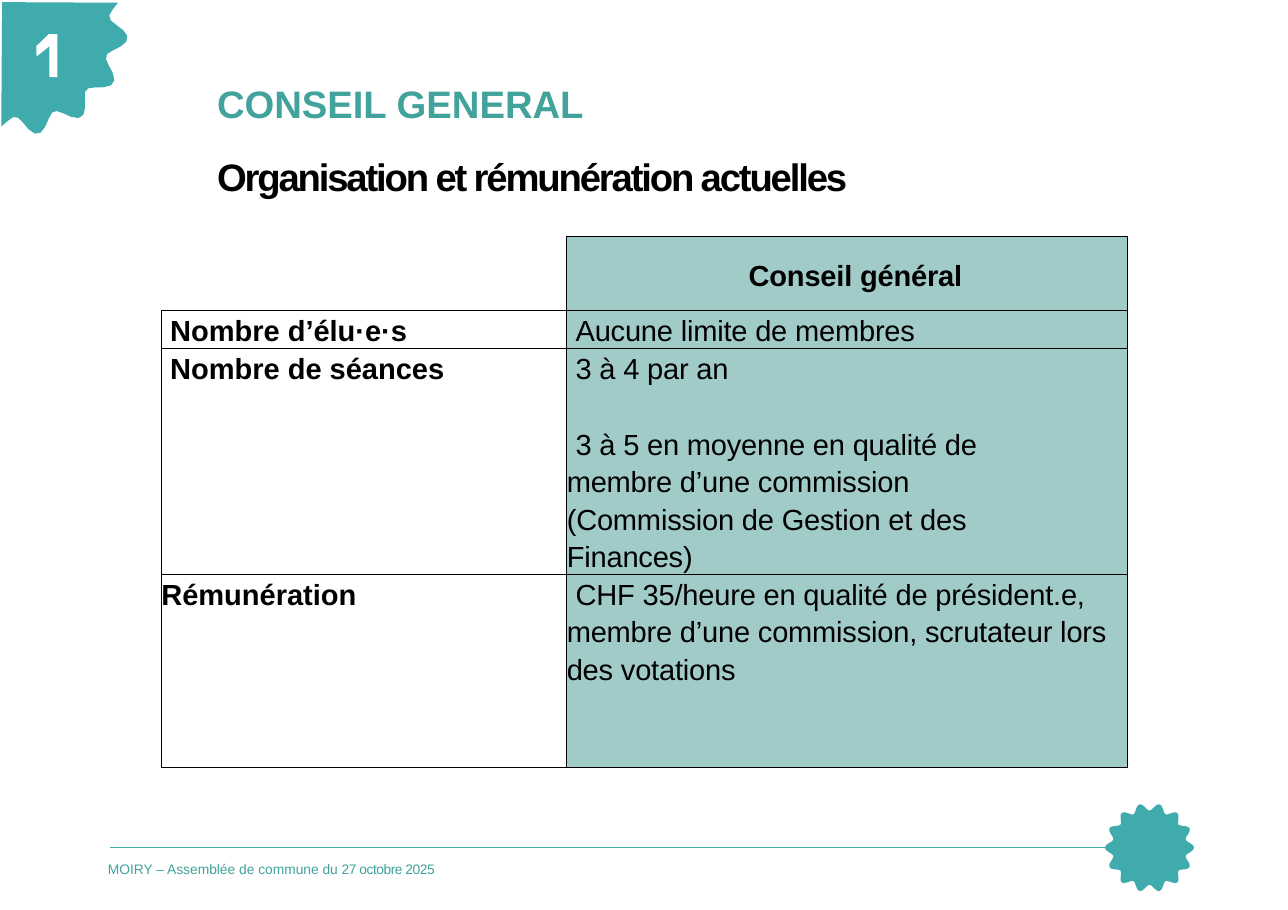
import math

import pptx
import pptx.dml.color
import pptx.enum.shapes
import pptx.enum.text
import pptx.oxml
import pptx.oxml.ns
import pptx.util

RGBColor = pptx.dml.color.RGBColor
Align = pptx.enum.text.PP_ALIGN
Anchor = pptx.enum.text.MSO_ANCHOR
Pt = pptx.util.Pt
Inches = pptx.util.Inches

TEAL = RGBColor(0x40, 0xAB, 0xAD)
TITLE_TEAL = RGBColor(0x42, 0xA2, 0x9C)
PALE_TEAL = RGBColor(0xA1, 0xCB, 0xC9)
BLACK = RGBColor(0, 0, 0)
WHITE = RGBColor(0xFF, 0xFF, 0xFF)

BADGE_WAVES = 14
STEPS_PER_WAVE = 8

ROWS = [
    ("", "Conseil général"),
    ("Nombre d’élu·e·s", "Aucune limite de membres"),
    ("Nombre de séances",
     "3 à 4 par an\n3 à 5 en moyenne en qualité de membre d’une commission "
     "(Commission de Gestion et des Finances)"),
    ("Rémunération",
     "CHF 35/heure en qualité de président.e, membre d’une commission, "
     "scrutateur lors des votations"),
]


class SlideBuilder:
    """Draws on a grid of 100 columns by 100 rows."""

    font = "Arial"

    def __init__(self, prs, layout):
        self.column = prs.slide_width / 100
        self.row = prs.slide_height / 100
        self.slide = prs.slides.add_slide(layout)
        self.shapes = self.slide.shapes

    def x(self, columns):
        return round(columns * self.column)

    def y(self, rows):
        return round(rows * self.row)

    def box(self, left, top, width, height):
        return self.x(left), self.y(top), self.x(width), self.y(height)

    def style_run(self, r, size, color, bold=False, spacing=0.0):
        r.font.name = self.font
        r.font.size = Pt(size)
        r.font.bold = bold
        r.font.color.rgb = color
        r._r.get_or_add_rPr().set("spc", str(round(spacing * 100)))

    def indent(self, p, inches):
        pPr = p._p.get_or_add_pPr()
        pPr.set("marL", "0")
        pPr.set("indent", str(Inches(inches)))

    def clear_frame(self, tf):
        tf.margin_left = tf.margin_right = tf.margin_top = tf.margin_bottom = 0
        tf.word_wrap = True
        tf.vertical_anchor = Anchor.TOP

    def title(self, box, heading, subheading):
        sp = self.shapes.title
        sp.left, sp.top, sp.width, sp.height = self.box(*box)
        tf = sp.text_frame
        self.clear_frame(tf)
        tf.auto_size = pptx.enum.text.MSO_AUTO_SIZE.NONE
        tf.text = f"{heading}\n{subheading}"
        for p, color, spacing in zip(tf.paragraphs, (TITLE_TEAL, BLACK), (0, -1.4)):
            p.alignment = Align.LEFT
            p.line_spacing = 1.55
            p.space_before = Pt(1)
            self.indent(p, 0.01)
            self.style_run(p.runs[0], 25, color, True, spacing)

    def footer(self, box, place, date):
        tf = self.shapes.add_textbox(*self.box(*box)).text_frame
        self.clear_frame(tf)
        p = tf.paragraphs[0]
        self.indent(p, 0.01)
        for text, spacing in ((place, 0), (date, -0.3)):
            r = p.add_run()
            r.text = text
            self.style_run(r, 9, TITLE_TEAL, spacing=spacing)

    def rule(self, left, right, row):
        line = self.shapes.add_connector(
            pptx.enum.shapes.MSO_CONNECTOR.STRAIGHT,
            self.x(left), self.y(row), self.x(right), self.y(row))
        line.line.color.rgb = TEAL
        line.line.width = Pt(0.9)
        line._element.spPr.append(pptx.oxml.parse_xml(
            f"<a:effectLst {pptx.oxml.ns.nsdecls('a')}/>"))

    def outline(self, points, color):
        """Fills a closed outline whose points are in slide units."""
        builder = self.shapes.build_freeform(*points[0])
        builder.add_line_segments(points[1:], close=True)
        sp = builder.convert_to_shape()
        sp.shadow.inherit = False
        sp.fill.solid()
        sp.fill.fore_color.rgb = color
        sp.line.fill.background()

    def wavy_arc(self, center, radius, phase, start, end):
        """Points of a wavy circle's edge; angles in degrees, clockwise from the right."""
        cx, cy = self.x(center[0]), self.y(center[1])
        count = round((end - start) / 360 * BADGE_WAVES * STEPS_PER_WAVE)
        points = []
        for i in range(count + 1):
            angle = start + (end - start) * i / count
            wave = math.cos(math.radians(BADGE_WAVES * (angle - phase)))
            reach = self.x(radius) * (0.915 + 0.085 * wave)
            a = math.radians(angle)
            points.append((round(cx + reach * math.cos(a)),
                           round(cy + reach * math.sin(a))))
        return points

    def border(self, cell, sides, visible):
        for side in sides:
            fill = (f'<a:solidFill><a:srgbClr val="{BLACK}"/></a:solidFill>'
                    if visible else "<a:noFill/>")
            cell._tc.get_or_add_tcPr().append(pptx.oxml.parse_xml(
                f'<a:ln{side} {pptx.oxml.ns.nsdecls("a")} w="{Pt(0.5)}">{fill}</a:ln{side}>'))

    def cell(self, cell, text, row, column):
        header = row == 0
        if header and column == 0:
            for side in "LRTB":
                self.border(cell, side, side in "RB")
        else:
            self.border(cell, "LRTB", True)
        if column == 1:
            cell.fill.solid()
            cell.fill.fore_color.rgb = PALE_TEAL
        else:
            cell.fill.background()
        cell.margin_left = cell.margin_right = cell.margin_top = cell.margin_bottom = 0
        if row == 2:
            cell.margin_right = Inches(0.6)
        cell.vertical_anchor = Anchor.MIDDLE if row < 2 else Anchor.TOP
        cell.text_frame.text = text
        for i, p in enumerate(cell.text_frame.paragraphs):
            p.alignment = Align.CENTER if header else Align.LEFT
            p.line_spacing = 1.16
            p.space_before = Pt(25.3 * i)
            self.indent(p, 0.15 if header else 0 if (row, column) == (3, 0) else 0.08)
            for r in p.runs:
                self.style_run(r, 19, BLACK, header or column == 0, -0.1 * column)

    def table(self, left, top, widths, heights, rows):
        frame = self.shapes.add_table(
            len(heights), len(widths),
            *self.box(left, top, sum(widths), sum(heights)))
        table = frame.table
        table.first_row = table.horz_banding = False
        for column, width in zip(table.columns, widths):
            column.width = self.x(width)
        for row, height in zip(table.rows, heights):
            row.height = self.y(height)
        for i, texts in enumerate(rows):
            for j, text in enumerate(texts):
                self.cell(table.cell(i, j), text, i, j)


def main():
    prs = pptx.Presentation()
    prs.slide_width, prs.slide_height = Inches(11.69), Inches(8.26)
    s = SlideBuilder(prs, prs.slide_layouts[5])

    badge_center = (89.25, 93.15)
    s.outline(s.wavy_arc(badge_center, 3.46, 180, 0, 360), TEAL)
    s.rule(8.55, badge_center[0], badge_center[1])

    corner = (s.x(0.17), s.y(0.24))
    s.outline([corner] + s.wavy_arc((1.77, 3.27), 8.17, 4.7, -15.8, 102.5), TEAL)
    digit_one = [(4.45, 3.75), (3.8, 3.75), (2.82, 5.08), (2.82, 6.05), (2.91, 6.17),
                 (2.99, 6.05), (3.85, 5.08), (3.85, 8.47), (4.45, 8.47)]
    s.outline([(s.x(x), s.y(y)) for x, y in digit_one], WHITE)

    s.title((16.77, 6.05, 57.74, 14.29),
            "CONSEIL GENERAL", "Organisation et rémunération actuelles")
    s.table(12.53, 26, (31.48, 43.54), (8.11, 3.63, 22.52, 21.19), ROWS)
    s.footer((8.3, 94.55, 30.11, 1.69),
             "MOIRY – Assemblée de commune du ", "27 octobre 2025")
    prs.save("out.pptx")


if __name__ == "__main__":
    main()
